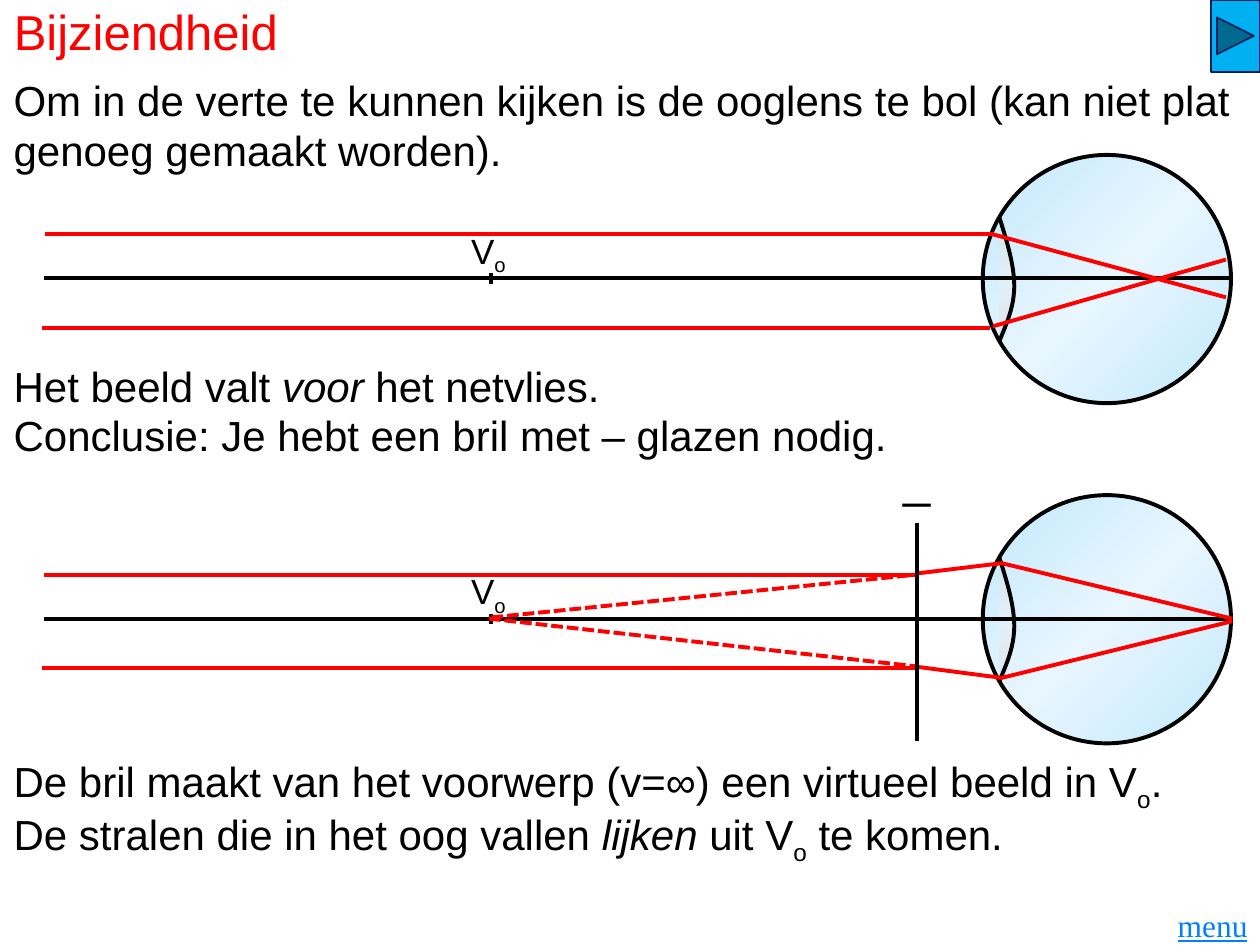
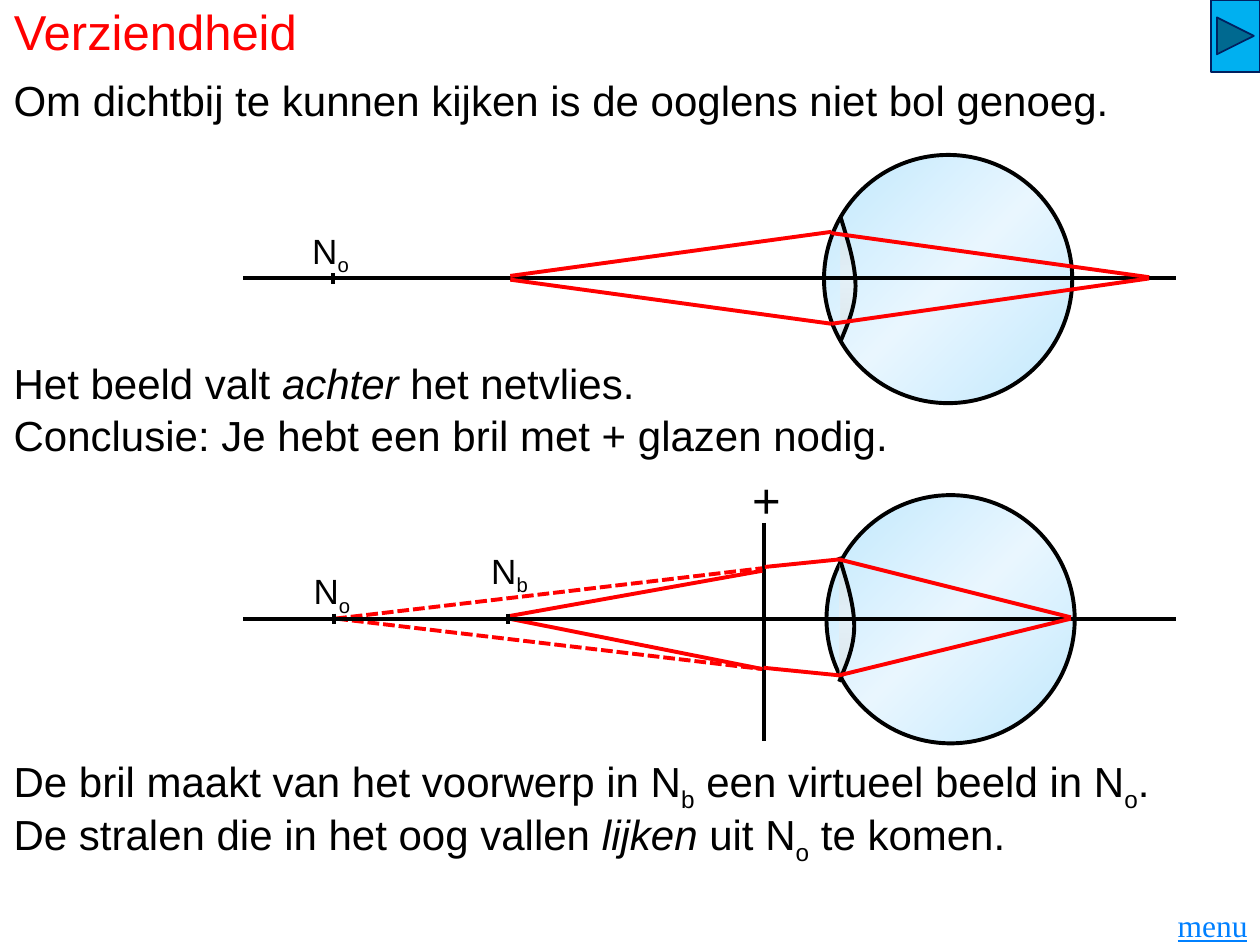
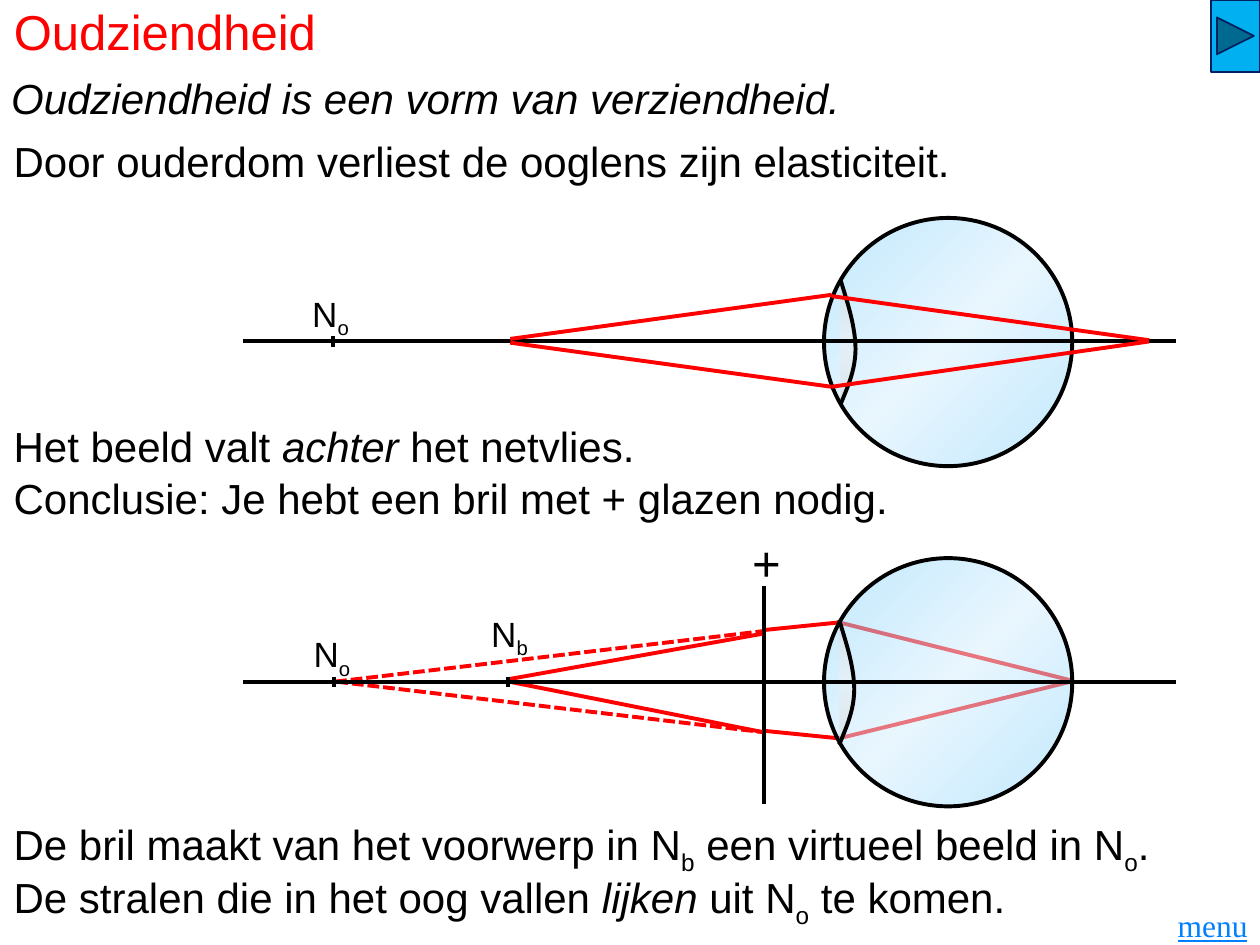
from pptx import Presentation
from pptx.dml.color import RGBColor
from pptx.enum.dml import MSO_LINE
from pptx.enum.shapes import MSO_CONNECTOR, MSO_SHAPE
from pptx.enum.text import MSO_ANCHOR, MSO_AUTO_SIZE, PP_ALIGN
from pptx.oxml import parse_xml
from pptx.oxml.ns import nsdecls
from pptx.util import Inches, Pt

COLORS = {
    "title": "FF0000", "ray": "FF0000", "ink": "000000", "link": "0080FF",
    "button": "00B0F0", "button_edge": "002060",
    "eye": "83D3FE", "eye_mid": "D6F0FF", "lens": "D9D9D9", "lens_mid": "F2F2F2",
}
STROKE = 2.25
EYE_SIZE = 1.97


def rgb(name):
    return RGBColor.from_string(COLORS[name])


def inches(*values):
    return [Inches(v) for v in values]


def sub(text):
    return text, "sub"


def ital(text):
    return text, "italic"


def write(tf, runs, size=24, font="Arial", color="ink", align=PP_ALIGN.LEFT, underline=None):
    tf.word_wrap = True
    tf.auto_size = MSO_AUTO_SIZE.SHAPE_TO_FIT_TEXT
    tf.vertical_anchor = MSO_ANCHOR.TOP
    p = tf.paragraphs[0]
    p.alignment = align
    for run in runs:
        text, style = (run, None) if isinstance(run, str) else run
        r = p.add_run()
        r.text = text
        r.font.size = Pt(size)
        r.font.name = font
        r.font.color.rgb = rgb(color)
        r.font.underline = underline
        if style == "italic":
            r.font.italic = True
        elif style == "sub":
            r._r.get_or_add_rPr().set("baseline", "-25000")


def add_text(s, x, y, w, h, *runs, **fmt):
    box = s.shapes.add_textbox(*inches(x, y, w, h))
    write(box.text_frame, runs, **fmt)


def body(s, y, *runs, x=0.01, h=0.5):
    add_text(s, x, y, 10.03, h, *runs)


def stroke(shape, color="ink", width=STROKE):
    shape.line.color.rgb = rgb(color)
    shape.line.width = Pt(width)


def add_line(s, start, end, color="ink", dashed=False):
    c = s.shapes.add_connector(MSO_CONNECTOR.STRAIGHT, *inches(*start, *end))
    stroke(c, color)
    if dashed:
        c.line.dash_style = MSO_LINE.SQUARE_DOT
    c._element.spPr.append(parse_xml(f"<a:effectLst {nsdecls('a')}/>"))


def add_outline(s, points, color="ink"):
    start, *rest = [inches(*pt) for pt in points]
    fb = s.shapes.build_freeform(*start)
    fb.add_line_segments(rest, close=False)
    sp = fb.convert_to_shape()
    sp.shadow.inherit = False
    stroke(sp, color)
    return sp


def add_ray(s, *points, dy=0, dashed=False):
    points = [(x, y + dy) for x, y in points]
    if len(points) == 2:
        add_line(s, *points, color="ray", dashed=dashed)
    else:
        add_outline(s, points, "ray").fill.background()


def set_gradient(sp, edge, middle, angle):
    stops = "".join(
        f'<a:gs pos="{pos}"><a:srgbClr val="{COLORS[name]}"><a:alpha val="50000"/></a:srgbClr></a:gs>'
        for pos, name in ((0, edge), (50000, middle), (100000, edge)))
    sp._element.spPr.insert(2, parse_xml(
        f'<a:gradFill {nsdecls("a")} rotWithShape="1"><a:gsLst>{stops}</a:gsLst>'
        f'<a:lin ang="{angle * 60000}" scaled="1"/></a:gradFill>'))


def bezier(a, b, c, d, steps=12):
    for i in range(steps + 1):
        t = i / steps
        u = 1 - t
        yield tuple(u**3 * k + 3 * u * u * t * m + 3 * u * t * t * n + t**3 * o
                    for k, m, n, o in zip(a, b, c, d))


def add_eye(s, x, axis_y, lens_x, axis):
    ball = s.shapes.add_shape(MSO_SHAPE.OVAL, *inches(x, axis_y - 0.98, EYE_SIZE, EYE_SIZE))
    set_gradient(ball, "eye", "eye_mid", 45)
    ball.shadow.inherit = False
    stroke(ball)
    top, mid, low = axis_y - 0.49, axis_y + 0.06, axis_y + 0.5
    upper = bezier((lens_x, top), (lens_x + 0.06, top + 0.19),
                   (lens_x + 0.12, top + 0.38), (lens_x + 0.12, mid))
    lower = bezier((lens_x + 0.12, mid), (lens_x + 0.12, mid + 0.16),
                   (lens_x + 0.06, mid + 0.3), (lens_x, low))
    lens = add_outline(s, [*upper, *list(lower)[1:]])
    set_gradient(lens, "lens", "lens_mid", 90)
    add_line(s, (axis[0], axis_y), (axis[1], axis_y))


def add_mark(s, x, axis_y, letter, index, dx=-0.26, rise=0.44):
    add_text(s, x + dx, axis_y - rise, 0.63, 0.44, letter, sub(index), size=20)
    add_line(s, (x, axis_y - 0.04), (x, axis_y + 0.04))


def add_glass(s, x, y, sign, sign_x, sign_y):
    add_line(s, (x, y), (x, y + 1.73))
    add_text(s, sign_x, sign_y, 0.55, 0.57, sign, size=28)


def add_page(prs, title):
    s = prs.slides.add_slide(prs.slide_layouts[5])
    t = s.shapes.title
    t.left, t.top, t.width, t.height = inches(0.01, -0.04, 8.5, 0.57)
    write(t.text_frame, [title], size=28, color="title")
    add_text(s, 9.06, 7.14, 0.94, 0.4, "menu", size=18, font="Times New Roman",
             color="link", align=PP_ALIGN.RIGHT, underline=True)
    b = s.shapes.add_shape(MSO_SHAPE.ACTION_BUTTON_FORWARD_OR_NEXT, *inches(9.61, 0, 0.39, 0.57))
    b.shadow.inherit = False
    b.fill.solid()
    b.fill.fore_color.rgb = rgb("button")
    stroke(b, "button_edge", 1)
    return s


def add_conclusions(s, side, sign, source, point, dy=0, result_y=2.79):
    body(s, result_y + dy, "Het beeld valt ", ital(side), " het netvlies.")
    body(s, 3.2 + dy, f"Conclusie: Je hebt een bril met {sign} glazen nodig.")
    body(s, 5.95 + dy, "De bril maakt van het voorwerp ", *source,
         f" een virtueel beeld in {point}", sub("o"), ".")
    body(s, 6.37 + dy, "De stralen die in het oog vallen ", ital("lijken"),
         f" uit {point}", sub("o"), " te komen.")


def draw_nearsighted(s):
    for axis_y in (2.21, 4.91):
        add_eye(s, 7.8, axis_y, 7.93, (0.35, 9.77))
        add_mark(s, 3.9, axis_y, "V", "o")
    add_ray(s, (0.36, 1.86), (7.89, 1.86))
    add_ray(s, (0.33, 2.6), (7.86, 2.6))
    add_ray(s, (7.88, 1.86), (9.73, 2.36))
    add_ray(s, (7.88, 2.59), (9.73, 2.06))
    add_ray(s, (0.35, 4.56), (7.28, 4.56))
    add_ray(s, (0.33, 5.3), (7.28, 5.3))
    add_ray(s, (7.29, 4.55), (7.95, 4.47), (9.78, 4.91))
    add_ray(s, (7.26, 5.29), (7.95, 5.38), (9.78, 4.93))
    add_ray(s, (3.9, 4.9), (7.28, 4.56), dashed=True)
    add_ray(s, (3.88, 4.91), (7.28, 5.29), dashed=True)
    add_glass(s, 7.28, 4.15, "_", 7.07, 3.51)


def draw_refracted(s, dy):
    add_ray(s, (6.07, 4.5), (6.66, 4.44), (8.5, 4.9), dy=dy)
    add_ray(s, (6.06, 5.3), (6.66, 5.36), (8.5, 4.91), dy=dy)


def draw_farsighted(s, dy=0, corrected_x=6.56, rays_behind=False):
    axis = (1.93, 9.33)
    if rays_behind:
        draw_refracted(s, dy)
    add_glass(s, 6.06, 4.15 + dy, "+", 5.87, 3.68 + dy)
    add_eye(s, 6.54, 2.21 + dy, 6.67, axis)
    add_mark(s, 2.64, 2.21 + dy, "N", "o")
    add_ray(s, (6.6, 1.84), (4.05, 2.19), dy=dy)
    add_ray(s, (6.6, 2.57), (4.05, 2.22), dy=dy)
    add_ray(s, (6.6, 1.85), (9.12, 2.2), dy=dy)
    add_ray(s, (6.6, 2.57), (9.12, 2.21), dy=dy)
    add_ray(s, (6.05, 4.53), (4.04, 4.89), dy=dy)
    add_ray(s, (6.05, 5.31), (4.04, 4.91), dy=dy)
    add_ray(s, (2.66, 4.91), (6.05, 4.51), dy=dy, dashed=True)
    add_ray(s, (2.67, 4.91), (6.05, 5.31), dy=dy, dashed=True)
    add_eye(s, corrected_x, 4.91 + dy, 6.66, axis)
    add_mark(s, 2.65, 4.91 + dy, "N", "o")
    add_mark(s, 4.03, 4.91 + dy, "N", "b", dx=-0.23, rise=0.6)
    if not rays_behind:
        draw_refracted(s, dy)


def main():
    prs = Presentation()
    prs.slide_width, prs.slide_height = inches(10, 7.5)
    near_source = ("in N", sub("b"))

    s = add_page(prs, "Bijziendheid")
    body(s, 0.54, "Om in de verte te kunnen kijken is de ooglens te bol "
         "(kan niet plat genoeg gemaakt worden).", h=0.91)
    draw_nearsighted(s)
    add_conclusions(s, "voor", "–", ("(v=∞)",), "V", result_y=2.81)

    s = add_page(prs, "Verziendheid")
    body(s, 0.54, "Om dichtbij te kunnen kijken is de ooglens niet bol genoeg.")
    draw_farsighted(s)
    add_conclusions(s, "achter", "+", near_source, "N")

    s = add_page(prs, "Oudziendheid")
    body(s, 0.53, ital("Oudziendheid is een vorm van verziendheid."), x=-0.01)
    body(s, 1.03, "Door ouderdom verliest de ooglens zijn elasticiteit.")
    draw_farsighted(s, dy=0.5, corrected_x=6.54, rays_behind=True)
    add_conclusions(s, "achter", "+", near_source, "N", dy=0.5)

    prs.save("out.pptx")


if __name__ == "__main__":
    main()
